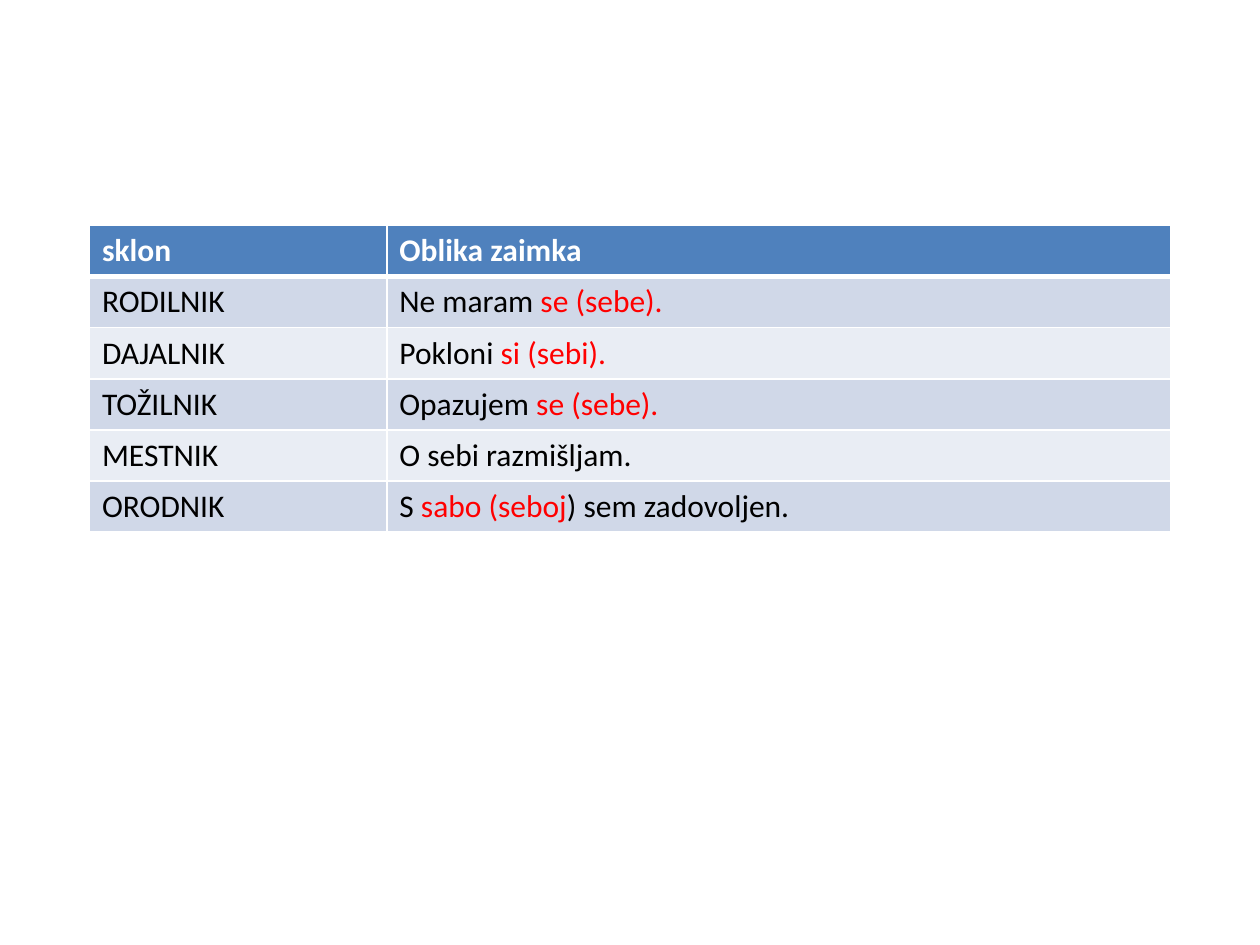
"""Build a slide with a table of Slovene reflexive pronoun forms by case."""
import dataclasses

import lxml.etree
import pptx
import pptx.dml.color
import pptx.oxml.ns
import pptx.util


@dataclasses.dataclass(frozen=True)
class Theme:
    font: str = "Calibri"
    size: int = 18
    header: str = "4F81BD"
    bands: tuple = ("D0D8E8", "E9EDF4")
    light: str = "FFFFFF"
    text: str = "000000"
    accent: str = "FF0000"
    thin_line: int = 1
    thick_line: int = 3


def add_border(cell, side, width, color):
    """Draw a solid border on one side of a cell."""
    qualified = pptx.oxml.ns.qn
    line = lxml.etree.SubElement(
        cell._tc.get_or_add_tcPr(), qualified(f"a:ln{side}"), w=str(pptx.util.Pt(width))
    )
    fill = lxml.etree.SubElement(line, qualified("a:solidFill"))
    lxml.etree.SubElement(fill, qualified("a:srgbClr"), val=color)


theme = Theme()
rgb = pptx.dml.color.RGBColor.from_string

header = [[("sklon", theme.light)], [("Oblika zaimka", theme.light)]]
cases = [
    ("RODILNIK", [("Ne maram ", theme.text), ("se (sebe).", theme.accent)]),
    ("DAJALNIK", [("Pokloni ", theme.text), ("si (sebi).", theme.accent)]),
    ("TOŽILNIK", [("Opazujem ", theme.text), ("se (sebe).", theme.accent)]),
    ("MESTNIK", [("O sebi razmišljam.", theme.text)]),
    ("ORODNIK", [("S ", theme.text), ("sabo (seboj", theme.accent),
                 (") sem zadovoljen.", theme.text)]),
]
rows = [header] + [[[(name, theme.text)], example] for name, example in cases]

presentation = pptx.Presentation()
presentation.slide_width = pptx.util.Inches(10)
presentation.slide_height = pptx.util.Inches(7.5)
slide = presentation.slides.add_slide(presentation.slide_layouts[6])

column_widths = [pptx.util.Inches(2.36), pptx.util.Inches(6.22)]
table_width = sum(column_widths)
row_height = int(presentation.slide_height * 0.054)
table = slide.shapes.add_table(
    len(rows), len(column_widths),
    (presentation.slide_width - table_width) // 2, pptx.util.Inches(1.79),
    table_width, row_height * len(rows),
).table

for column, width in zip(table.columns, column_widths):
    column.width = width

for row_index, row in enumerate(rows):
    table.rows[row_index].height = row_height
    is_header = row_index == 0
    fill_color = theme.header if is_header else theme.bands[(row_index - 1) % 2]
    for column_index, runs in enumerate(row):
        cell = table.cell(row_index, column_index)
        for side in "LRTB":
            is_thick = (side == "B" and is_header) or (side == "T" and row_index == 1)
            width = theme.thick_line if is_thick else theme.thin_line
            add_border(cell, side, width, theme.light)
        cell.fill.solid()
        cell.fill.fore_color.rgb = rgb(fill_color)
        paragraph = cell.text_frame.paragraphs[0]
        for text, color in runs:
            run = paragraph.add_run()
            run.text = text
            run.font.name = theme.font
            run.font.size = pptx.util.Pt(theme.size)
            run.font.bold = is_header
            run.font.color.rgb = rgb(color)

presentation.save("out.pptx")
